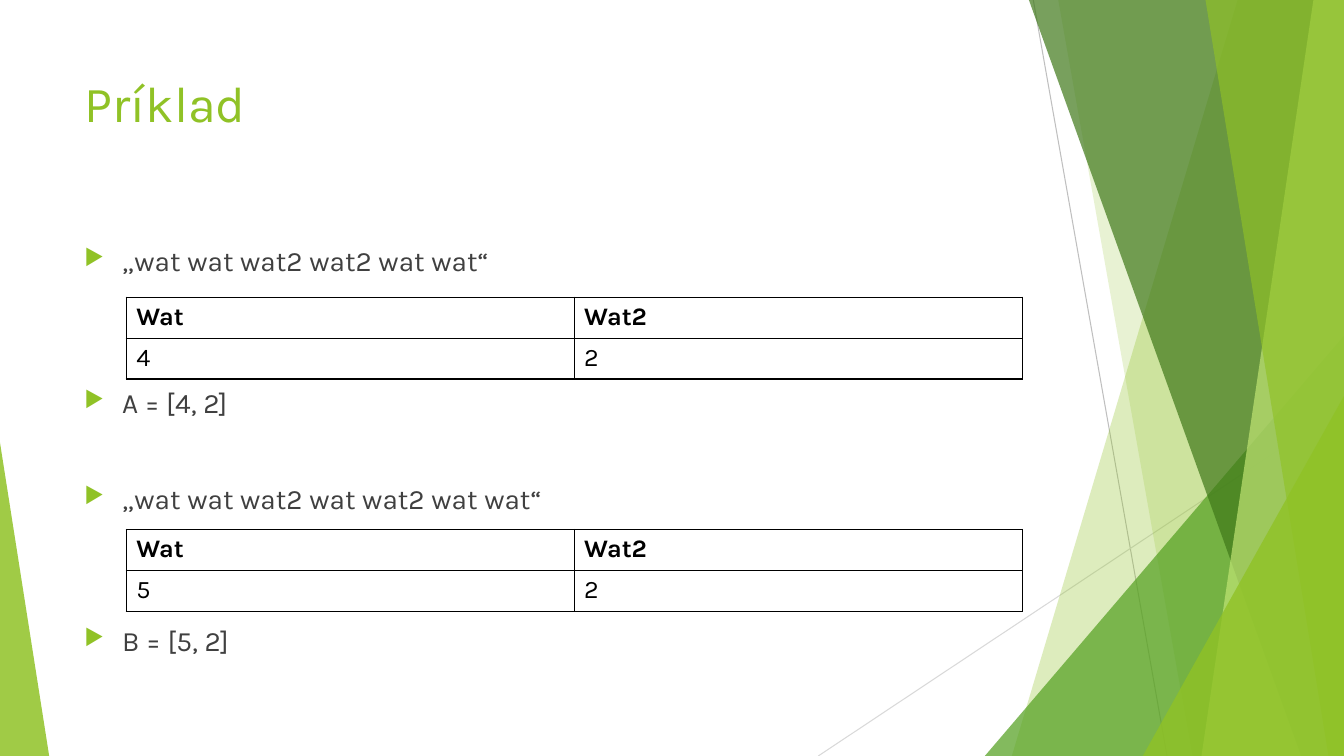
import dataclasses
import typing

import lxml.etree
import pptx
import pptx.dml.color
import pptx.enum.shapes
import pptx.enum.text
import pptx.oxml.ns
import pptx.util

Cm = pptx.util.Cm
Pt = pptx.util.Pt
qn = pptx.oxml.ns.qn

WIDTH, HEIGHT = 33.87, 19.05
FONT = "Karla"
COLORS = {
    "lime": "90C226",
    "green": "54A021",
    "forest": "3F7819",
    "pale": "C0E474",
    "gray": "BFBFBF",
    "silver": "D9D9D9",
    "text": "404040",
    "black": "000000",
    "white": "FFFFFF",
}
TITLE_FONT = {"name": FONT, "size": Pt(36), "bold": False}
BODY_FONT = {"name": FONT, "size": Pt(20)}
HEAD_FONT = {"name": FONT, "size": Pt(18), "bold": True}
CELL_FONT = {**HEAD_FONT, "bold": False}
TOP_TEXT = {"word_wrap": True, "vertical_anchor": pptx.enum.text.MSO_ANCHOR.TOP}
PLAIN_TABLE = {"first_row": False, "horz_banding": False}


@dataclasses.dataclass
class Ray:
    start: tuple[float, float]
    end: tuple[float, float]
    color: str


@dataclasses.dataclass
class Ribbon:
    """Full-height band from a slanted left edge to the right slide edge."""
    top_x: float
    bottom_x: float
    color: str
    opacity: int


@dataclasses.dataclass
class Wedge:
    """Right triangle standing on the bottom slide edge."""
    left: float
    top: float
    width: float
    apex: float
    color: str
    opacity: int


@dataclasses.dataclass
class Bullet:
    text: str
    space_before: float


@dataclasses.dataclass
class CountTable:
    top: float
    rows: list[list[str]]


RAYS = [
    Ray((26.04, 0), (29.41, HEIGHT), "gray"),
    Ray((WIDTH, 10.24), (20.62, HEIGHT), "silver"),
]
FACETS = [
    Ribbon(31.19, 25.5, "lime", 30),
    Ribbon(26.67, 30.05, "lime", 20),
    Wedge(24.82, 8.46, WIDTH - 24.82, 1, "green", 72),
    Ribbon(25.93, 32.79, "forest", 70),
    Ribbon(33.1, 30.28, "pale", 70),
    Ribbon(30.38, 33.48, "lime", 65),
    Wedge(28.8, 9.98, WIDTH - 28.8, 1, "lime", 80),
    Wedge(0, 11.15, 1.24, 0, "lime", 85),
]
BULLETS = [
    Bullet("„wat wat wat2 wat2 wat wat“", 0),
    Bullet("A = [4, 2]", 78),
    Bullet("„wat wat wat2 wat wat2 wat wat“", 44),
    Bullet("B = [5, 2]", 78),
]
TABLES = [
    CountTable(7.49, [["Wat", "Wat2"], ["4", "2"]]),
    CountTable(13.34, [["Wat", "Wat2"], ["5", "2"]]),
]


def rgb(color: str) -> pptx.dml.color.RGBColor:
    return pptx.dml.color.RGBColor.from_string(COLORS[color])


def set_format(target: typing.Any, values: dict[str, typing.Any]) -> None:
    for name, value in values.items():
        setattr(target, name, value)


def add_child(parent: typing.Any, tag: str, **attributes: str) -> typing.Any:
    return lxml.etree.SubElement(parent, qn(tag), attributes)


def write_run(p: typing.Any, text: str, font: dict[str, typing.Any], color: str) -> None:
    r = p.add_run()
    r.text = text
    set_format(r.font, font)
    r.font.color.rgb = rgb(color)


def draw_ray(shapes: typing.Any, ray: Ray) -> None:
    ends = [Cm(v) for v in ray.start + ray.end]
    line = shapes.add_connector(pptx.enum.shapes.MSO_CONNECTOR.STRAIGHT, *ends)
    line.line.color.rgb = rgb(ray.color)
    line.line.width = Pt(0.75)
    add_child(line.element.spPr, "a:effectLst")


def draw_facet(shapes: typing.Any, facet: Ribbon | Wedge) -> None:
    if isinstance(facet, Ribbon):
        builder = shapes.build_freeform(Cm(facet.top_x), 0)
        corners = [(WIDTH, 0), (WIDTH, HEIGHT), (facet.bottom_x, HEIGHT)]
        builder.add_line_segments([(Cm(x), Cm(y)) for x, y in corners], close=True)
        sp = builder.convert_to_shape()
    else:
        box = (facet.left, facet.top, facet.width, HEIGHT - facet.top)
        sp = shapes.add_shape(
            pptx.enum.shapes.MSO_SHAPE.ISOSCELES_TRIANGLE, *[Cm(v) for v in box])
        sp.adjustments[0] = facet.apex
    sp.shadow.inherit = False
    sp.line.fill.background()
    sp.fill.solid()
    sp.fill.fore_color.rgb = rgb(facet.color)
    fill_color = sp.element.spPr.find(qn("a:solidFill")).find(qn("a:srgbClr"))
    add_child(fill_color, "a:alpha", val=str(facet.opacity * 1000))


def write_title(title: typing.Any, text: str) -> None:
    set_format(title, {"left": Cm(1.88), "top": Cm(1.7),
                       "width": Cm(23.88), "height": Cm(3.66)})
    set_format(title.text_frame, TOP_TEXT)
    p = title.text_frame.paragraphs[0]
    p.alignment = pptx.enum.text.PP_ALIGN.LEFT
    write_run(p, text, TITLE_FONT, "lime")


def write_bullets(shapes: typing.Any, bullets: list[Bullet]) -> None:
    tf = shapes.add_textbox(Cm(1.88), Cm(6), Cm(23.88), Cm(10.77)).text_frame
    set_format(tf, TOP_TEXT)
    for i, bullet in enumerate(bullets):
        p = tf.add_paragraph() if i else tf.paragraphs[0]
        p.space_before = Pt(bullet.space_before)
        pPr = p._p.get_or_add_pPr()
        pPr.set("marL", str(Cm(0.95)))
        pPr.set("indent", str(-Cm(0.95)))
        add_child(add_child(pPr, "a:buClr"), "a:srgbClr", val=COLORS["lime"])
        add_child(pPr, "a:buSzPct", val="80000")
        add_child(pPr, "a:buChar", char="▶")
        write_run(p, bullet.text, BODY_FONT, "text")


def draw_table(shapes: typing.Any, counts: CountTable) -> None:
    n_rows, n_cols = len(counts.rows), len(counts.rows[0])
    table = shapes.add_table(n_rows, n_cols, Cm(3.18), Cm(counts.top),
                             Cm(11.29 * n_cols), Cm(1.03 * n_rows)).table
    set_format(table, PLAIN_TABLE)
    for i, row in enumerate(counts.rows):
        for j, text in enumerate(row):
            cell = table.cell(i, j)
            tcPr = cell._tc.get_or_add_tcPr()
            for side in "LRTB":
                border = add_child(tcPr, f"a:ln{side}", w=str(Pt(1)))
                add_child(add_child(border, "a:solidFill"), "a:srgbClr",
                          val=COLORS["black"])
            cell.fill.solid()
            cell.fill.fore_color.rgb = rgb("white")
            write_run(cell.text_frame.paragraphs[0], text,
                      CELL_FONT if i else HEAD_FONT, "black")


def main() -> None:
    prs = pptx.Presentation()
    set_format(prs, {"slide_width": Cm(WIDTH), "slide_height": Cm(HEIGHT)})
    slide = prs.slides.add_slide(prs.slide_layouts.get_by_name("Title Only"))
    for ray in RAYS:
        draw_ray(slide.shapes, ray)
    for facet in FACETS:
        draw_facet(slide.shapes, facet)
    write_title(slide.shapes.title, "Príklad")
    write_bullets(slide.shapes, BULLETS)
    for counts in TABLES:
        draw_table(slide.shapes, counts)
    prs.save("out.pptx")


if __name__ == "__main__":
    main()
